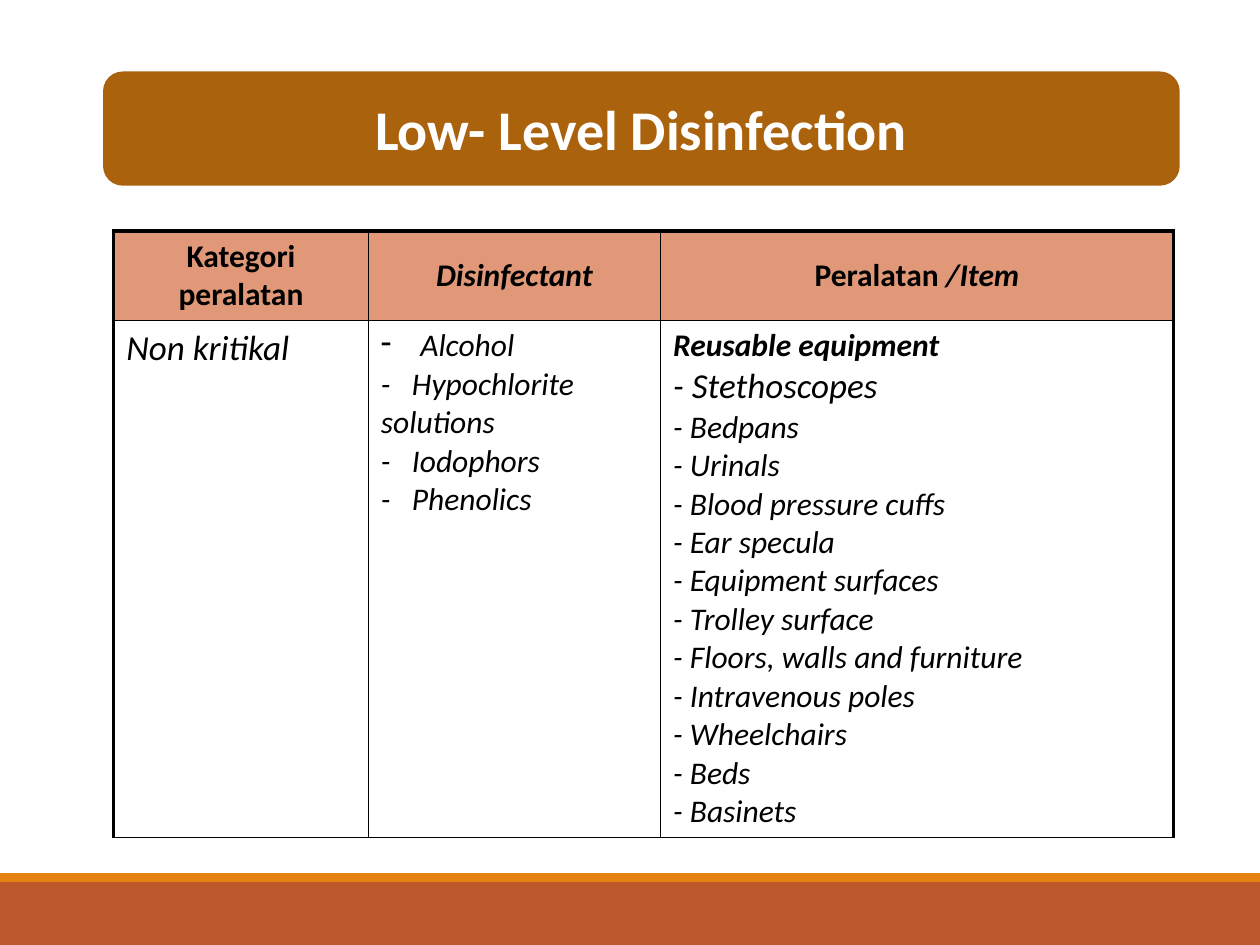
import pptx
import pptx.util
import pptx.dml.color
import pptx.enum.shapes
import pptx.enum.text
import pptx.oxml.ns
import lxml.etree

Pt = pptx.util.Pt
Anchor = pptx.enum.text.MSO_ANCHOR
Align = pptx.enum.text.PP_ALIGN
Kind = pptx.enum.shapes.MSO_SHAPE

COLORS = {"rust": "BD582C", "orange": "E48312", "brown": "AB620D", "edge": "A9610D",
          "salmon": "E09878", "black": "000000", "white": "FFFFFF"}
THICK, THIN = 2.25, 1


def tint(name):
    return pptx.dml.color.RGBColor.from_string(COLORS[name])


def add_node(parent, tag, **attrs):
    node = lxml.etree.SubElement(parent, pptx.oxml.ns.qn(tag))
    for key, value in attrs.items():
        node.set(key, str(value))
    return node


def write(para, text, size=18, bold=False, slant=False, color="black",
          align=Align.LEFT, hang=0, tab=0):
    """Add a run; hang gives a dash bullet with that indent, tab sets a tab stop."""
    para.alignment = align
    run = para.add_run()
    run.text = text
    font = run.font
    font.name, font.size, font.bold, font.italic = "Calibri", Pt(size), bold, slant
    font.color.rgb = tint(color)
    props = para._p.get_or_add_pPr()
    if hang:
        props.set("marL", str(Pt(hang)))
        props.set("indent", str(-Pt(hang)))
        add_node(props, "a:buChar", char="-")
    if tab:
        stops = add_node(props, "a:tabLst")
        add_node(stops, "a:tab", pos=Pt(tab), algn="l")


class Deck:
    def __init__(self, wide, high):
        self.show = pptx.Presentation()
        self.show.slide_width, self.show.slide_height = Pt(wide), Pt(high)
        self.slide = self.show.slides.add_slide(self.show.slide_layouts[6])

    def block(self, kind, box, fill, edge=None):
        shape = self.slide.shapes.add_shape(kind, *map(Pt, box))
        shape.shadow.inherit = False
        shape.fill.solid()
        shape.fill.fore_color.rgb = tint(fill)
        if edge:
            shape.line.color.rgb = tint(edge)
            shape.line.width = Pt(1.25)
        else:
            shape.line.fill.background()
        return shape

    def title(self, box, text):
        shape = self.block(Kind.ROUNDED_RECTANGLE, box, "brown", "edge")
        shape.text_frame.vertical_anchor = Anchor.MIDDLE
        write(shape.text_frame.paragraphs[0], text, size=32, bold=True,
              color="white", align=Align.CENTER)

    def table(self, left, top, cols, rows, cells):
        """Each cell is a list of paragraphs, each a list of (text, format)."""
        frame = self.slide.shapes.add_table(len(rows), len(cols), Pt(left), Pt(top),
                                            Pt(sum(cols)), Pt(sum(rows)))
        grid = frame.table
        grid.first_row = grid.horz_banding = False
        for col, width in zip(grid.columns, cols):
            col.width = Pt(width)
        for row, height in zip(grid.rows, rows):
            row.height = Pt(height)
        last = len(cols) - 1
        for r, line in enumerate(cells):
            for c, paras in enumerate(line):
                cell = grid.cell(r, c)
                self.border(cell, L=THIN if c else THICK, R=THICK if c == last else THIN,
                            T=THIN if r else THICK, B=THIN)
                self.fill(cell, paras, head=r == 0)

    def border(self, cell, **widths):
        props = cell._tc.get_or_add_tcPr()
        for side, width in widths.items():
            line = add_node(props, "a:ln" + side, w=Pt(width))
            add_node(add_node(line, "a:solidFill"), "a:srgbClr", val=COLORS["black"])

    def fill(self, cell, paras, head):
        if head:
            cell.fill.solid()
            cell.fill.fore_color.rgb = tint("salmon")
            cell.vertical_anchor = Anchor.MIDDLE
        else:
            cell.fill.background()
        frame = cell.text_frame
        for i, runs in enumerate(paras):
            para = frame.add_paragraph() if i else frame.paragraphs[0]
            for text, style in runs:
                write(para, text, **style)


def main():
    deck = Deck(720, 540)
    deck.block(Kind.RECTANGLE, (0, 504, 720, 36), "rust")
    deck.block(Kind.RECTANGLE, (0, 499, 720, 5), "orange")
    deck.title((59.5, 41.5, 614, 64), "Low- Level Disinfection")

    head = {"bold": True, "align": Align.CENTER}
    slant = {"slant": True}
    large = {"slant": True, "size": 20}
    agents = ["Hypochlorite solutions", "Iodophors", "Phenolics"]
    items = ["Bedpans", "Urinals", "Blood pressure cuffs", "Ear specula",
             "Equipment surfaces", "Trolley surface", "Floors, walls and furniture",
             "Intravenous poles", "Wheelchairs", "Beds", "Basinets"]
    titles = [
        [[("Kategori peralatan", head)]],
        [[("Disinfectant", head | slant)]],
        [[("Peralatan", head), (" /Item", head | slant)]],
    ]
    body = [
        [[("Non kritikal", large)]],
        [[("Alcohol", slant | {"hang": 22.5})]]
        + [[("-\t" + name, slant | {"tab": 17.75})] for name in agents],
        [[("Reusable equipment", slant | {"bold": True})], [("- Stethoscopes", large)]]
        + [[("- " + name, slant)] for name in items],
    ]
    deck.table(65, 132, (145.5, 167, 293), (51, 295), [titles, body])
    deck.show.save("out.pptx")


if __name__ == "__main__":
    main()
